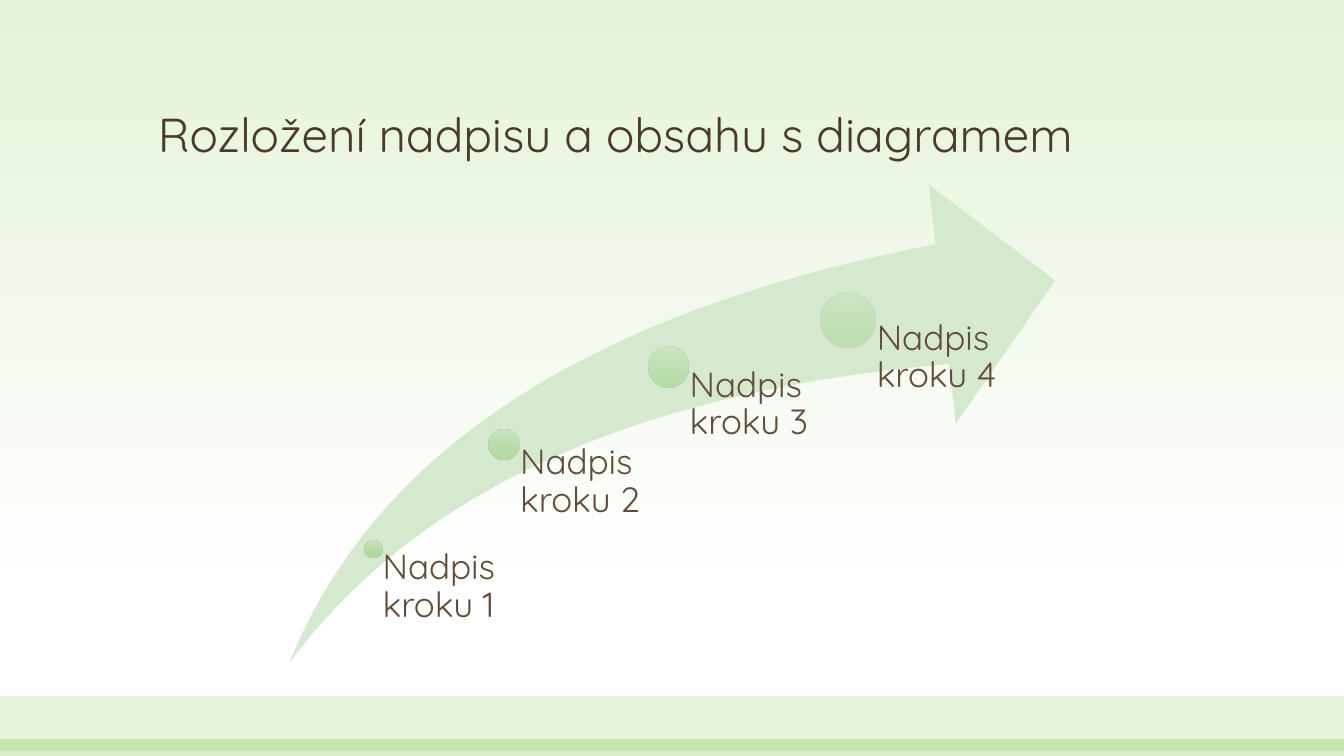
"""Builds a slide with a swoosh arrow and four growing steps."""
from dataclasses import dataclass

from lxml import etree
from pptx import Presentation
from pptx.dml.color import RGBColor
from pptx.enum import shapes, text
from pptx.oxml import ns
from pptx.util import Pt

FONT = "Quicksand"
BASELINE = 473.8
GREEN = "72C23C"


@dataclass
class Band:
    top: float
    height: float
    alpha: int


@dataclass
class Step:
    title: str
    center_x: float
    center_y: float
    diameter: float
    width: float
    alpha: int


BANDS = [Band(496.8, 39.6, 17), Band(527.8, 12.2, 28)]
STEPS = [
    Step("Nadpis kroku 1", 266.8, 392.2, 12.3, 93.6, 90),
    Step("Nadpis kroku 2", 360, 317.5, 21.7, 115.2, 77),
    Step("Nadpis kroku 3", 477.4, 262.1, 28.8, 115.2, 63),
    Step("Nadpis kroku 4", 605.7, 228.5, 38.9, 115.2, 50),
]


def color(value: str) -> RGBColor:
    return RGBColor.from_string(value)


def set_alpha(color_element, percent: int) -> None:
    etree.SubElement(color_element, ns.qn("a:alpha"), val=str(percent * 1000))


def set_gradient(fill, element, stops: list, alpha: int = 100) -> None:
    fill.gradient()
    fill.gradient_angle = 270
    stop_list = next(element.iter(ns.qn("a:gsLst")))
    for stop in list(stop_list):
        stop_list.remove(stop)
    for position, value in stops:
        stop = etree.SubElement(stop_list, ns.qn("a:gs"), pos=str(position * 1000))
        set_alpha(etree.SubElement(stop, ns.qn("a:srgbClr"), val=value), alpha)


def add_plain_shape(slide, kind, left: float, top: float, width: float,
                    height: float, fill: str, alpha: int = 100):
    shape = slide.shapes.add_shape(kind, Pt(left), Pt(top), Pt(width), Pt(height))
    shape.shadow.inherit = False
    shape.line.fill.background()
    shape.fill.solid()
    shape.fill.fore_color.rgb = color(fill)
    if alpha < 100:
        set_alpha(next(shape._element.spPr.iter(ns.qn("a:srgbClr"))), alpha)
    return shape


def add_text(slide, content: str, left: float, top: float, width: float, height: float,
             size: float, ink: str, anchor=text.MSO_ANCHOR.TOP,
             insets: tuple = (0, 0, 0, 0)) -> None:
    shape = slide.shapes.add_textbox(Pt(left), Pt(top), Pt(width), Pt(height))
    frame = shape.text_frame
    frame.word_wrap = True
    frame.vertical_anchor = anchor
    (frame.margin_left, frame.margin_top,
     frame.margin_right, frame.margin_bottom) = map(Pt, insets)
    frame.text = content
    paragraph = frame.paragraphs[0]
    paragraph.line_spacing = 0.9
    font = paragraph.runs[0].font
    font.name, font.size, font.color.rgb = FONT, Pt(size), color(ink)


def add_step(slide, step: Step) -> None:
    radius = step.diameter / 2
    circle = add_plain_shape(slide, shapes.MSO_SHAPE.OVAL, step.center_x - radius,
                             step.center_y - radius, step.diameter, step.diameter, "B3DBA2")
    set_gradient(circle.fill, circle._element.spPr,
                 [(0, "C8E5BC"), (50, "B3DBA2"), (100, "A4D78D")], step.alpha)
    add_text(slide, step.title, step.center_x, step.center_y, step.width,
             BASELINE - step.center_y, 25, "624D38", insets=(0.53 * step.diameter, 0, 0, 0))


def main() -> None:
    presentation = Presentation()
    presentation.slide_width, presentation.slide_height = Pt(960), Pt(540)
    slide = presentation.slides.add_slide(presentation.slide_layouts[6])
    set_gradient(slide.background.fill, slide._element, [(0, "E3F3D8"), (79, "FFFFFF")])
    for band in BANDS:
        add_plain_shape(slide, shapes.MSO_SHAPE.RECTANGLE, 0, band.top, 960,
                        band.height, GREEN, band.alpha)
    add_text(slide, "Rozložení nadpisu a obsahu s diagramem", 105.8, 34.2, 748.8, 85.7,
             34, "4A3A2A", text.MSO_ANCHOR.BOTTOM, (7.2, 3.6, 7.2, 3.6))
    arrow = add_plain_shape(slide, shapes.MSO_SHAPE.SWOOSH_ARROW, 206.6, 131.8, 547.2,
                            342, "D5E9CE")
    arrow.adjustments[0] = arrow.adjustments[1] = 0.25
    for step in STEPS:
        add_step(slide, step)
    presentation.save("out.pptx")


if __name__ == "__main__":
    main()
